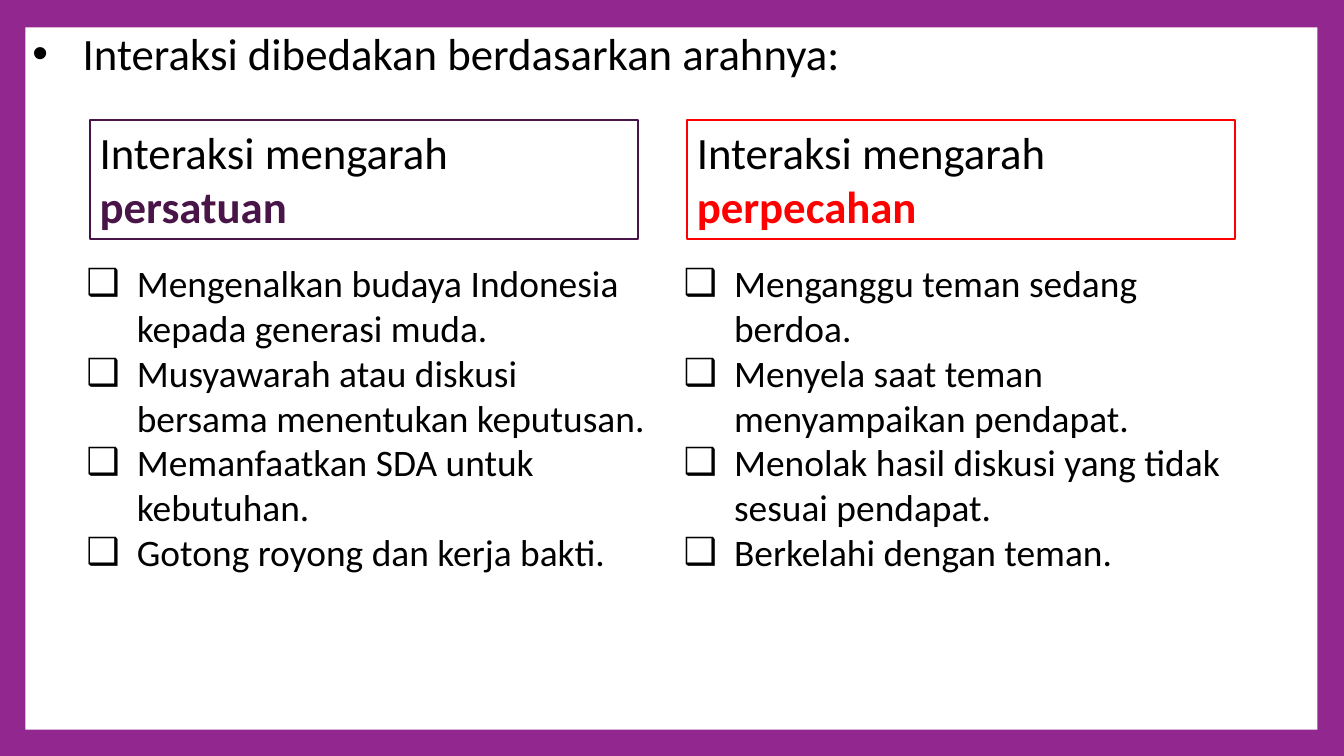
from lxml import etree
from pptx import Presentation
from pptx.dml.color import RGBColor
from pptx.enum import shapes, text
from pptx.oxml.ns import qn
from pptx.util import Cm, Pt


def color(value):
    return RGBColor.from_string(value)


def add_bullet(paragraph, character):
    properties = paragraph._p.get_or_add_pPr()
    properties.set("marL", str(Cm(1.27)))
    properties.set("indent", str(-Cm(1.27)))
    etree.SubElement(properties, qn("a:buFont"), typeface="Arial")
    etree.SubElement(properties, qn("a:buChar"), char=character)


BLACK, WHITE, PURPLE = "000000", "FFFFFF", "92278F"
columns = [
    ("persatuan", "491447", 10.52, [
        "Mengenalkan budaya Indonesia kepada generasi muda.",
        "Musyawarah atau diskusi bersama menentukan keputusan.",
        "Memanfaatkan SDA untuk kebutuhan.",
        "Gotong royong dan kerja bakti.",
    ]),
    ("perpecahan", "FF0000", 8.23, [
        "Menganggu teman sedang berdoa.",
        "Menyela saat teman menyampaikan pendapat.",
        "Menolak hasil diskusi yang tidak sesuai pendapat.",
        "Berkelahi dengan teman.",
    ]),
]
frame_format = {
    "word_wrap": True,
    "auto_size": text.MSO_AUTO_SIZE.NONE,
    "vertical_anchor": text.MSO_ANCHOR.TOP,
}
heading_font = {"name": "Calibri", "size": Pt(32)}
list_font = {"name": "Calibri", "size": Pt(26.7)}

presentation = Presentation()
presentation.slide_width, presentation.slide_height = Cm(33.87), Cm(19.05)
slide = presentation.slides.add_slide(presentation.slide_layouts[5])

# Purple background with a white panel behind everything
slide.background.fill.solid()
slide.background.fill.fore_color.rgb = color(PURPLE)
panel = slide.shapes.add_shape(
    shapes.MSO_SHAPE.RECTANGLE, Cm(0.64), Cm(0.69), Cm(32.56), Cm(17.7))
panel.shadow.inherit = False
panel.fill.solid()
panel.fill.fore_color.rgb = color(WHITE)
panel.line.fill.background()
slide.shapes._spTree.insert(2, panel._element)

# Title
title = slide.shapes.title
title.left, title.top, title.width, title.height = Cm(0.56), Cm(0.53), Cm(27.66), Cm(1.62)
for name, value in frame_format.items():
    setattr(title.text_frame, name, value)
title.text_frame.text = "Interaksi dibedakan berdasarkan arahnya:"
paragraph = title.text_frame.paragraphs[0]
paragraph.alignment = text.PP_ALIGN.LEFT
add_bullet(paragraph, "•")
for name, value in heading_font.items():
    setattr(paragraph.font, name, value)
paragraph.font.color.rgb = color(BLACK)

# Two columns, each a framed heading above a checklist
for index, (direction, accent, list_height, items) in enumerate(columns):
    offset = 15.05 * index
    heading = slide.shapes.add_shape(
        shapes.MSO_SHAPE.RECTANGLE, Cm(2.26 + offset), Cm(3.02), Cm(13.82), Cm(3))
    checklist = slide.shapes.add_shape(
        shapes.MSO_SHAPE.RECTANGLE, Cm(1.93 + offset), Cm(6.43), Cm(14.73), Cm(list_height))
    for shape in (heading, checklist):
        shape.shadow.inherit = False
        shape.fill.solid()
        shape.fill.fore_color.rgb = color(WHITE)
        for name, value in frame_format.items():
            setattr(shape.text_frame, name, value)
    heading.line.color.rgb = color(accent)
    heading.line.width = Pt(1.5)
    checklist.line.fill.background()

    paragraph = heading.text_frame.paragraphs[0]
    paragraph.alignment = text.PP_ALIGN.LEFT
    for words, ink, bold in [("Interaksi mengarah ", BLACK, False), (direction, accent, True)]:
        run = paragraph.add_run()
        run.text = words
        for name, value in {**heading_font, "bold": bold}.items():
            setattr(run.font, name, value)
        run.font.color.rgb = color(ink)

    checklist.text_frame.text = "\n".join(items)
    for paragraph in checklist.text_frame.paragraphs:
        paragraph.alignment = text.PP_ALIGN.LEFT
        add_bullet(paragraph, "❑")
        for name, value in list_font.items():
            setattr(paragraph.font, name, value)
        paragraph.font.color.rgb = color(BLACK)

presentation.save("out.pptx")
